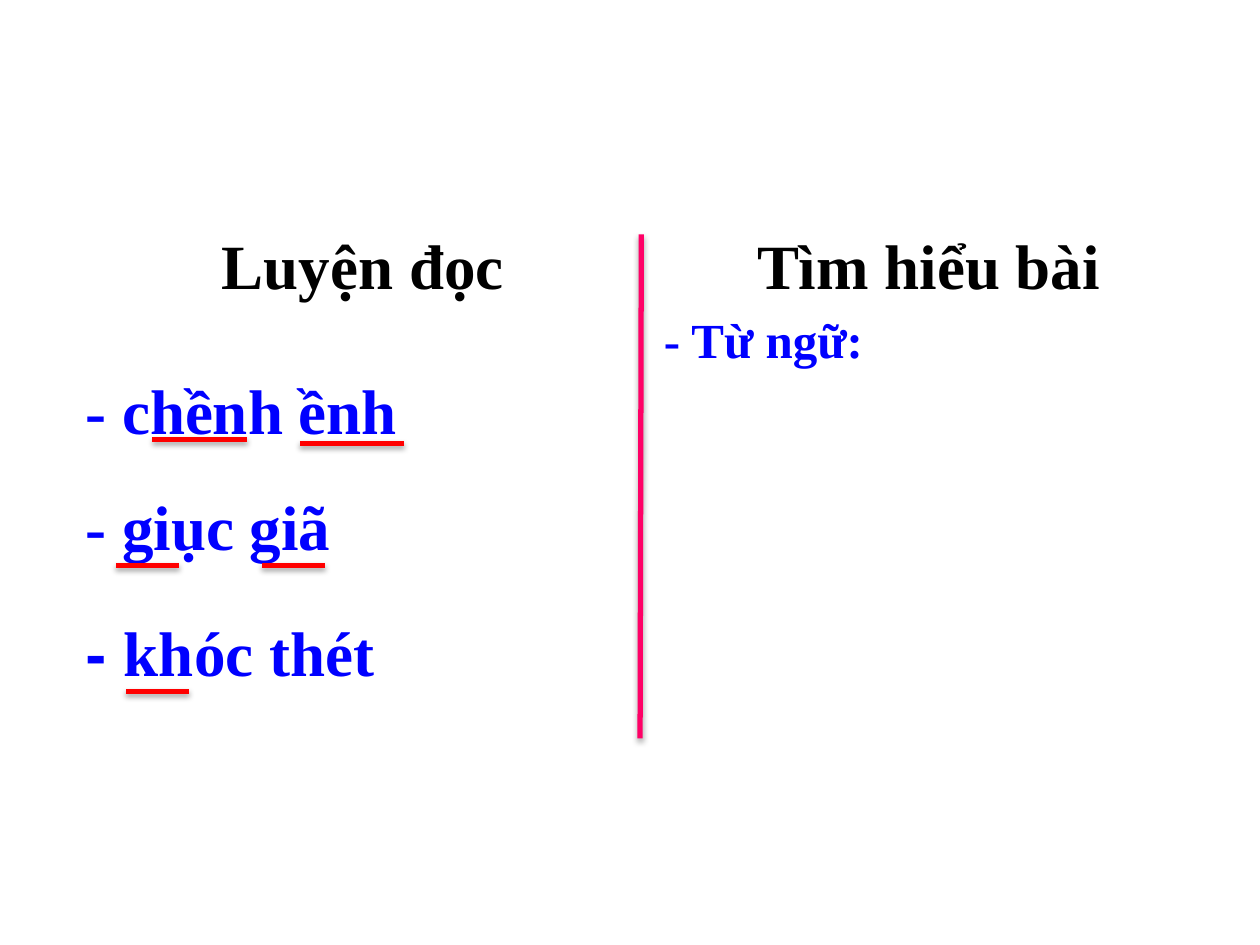
from lxml import etree
from pptx import Presentation
from pptx.dml.color import RGBColor
from pptx.enum.shapes import MSO_CONNECTOR as Link
from pptx.enum.text import MSO_ANCHOR as Anchor, MSO_AUTO_SIZE as Fit, PP_ALIGN as Align
from pptx.oxml import parse_xml
from pptx.util import Inches, Pt

SERIF = "Times New Roman"
WIDE, HIGH = 4.42, 0.7
SHADE = (
    '<a:effectLst xmlns:a="http://schemas.openxmlformats.org/drawingml/2006/main">'
    '<a:outerShdw blurRad="40000" dist="23000" dir="5400000" rotWithShape="0">'
    '<a:srgbClr val="000000"><a:alpha val="35000"/></a:srgbClr>'
    '</a:outerShdw></a:effectLst>'
)


def paint(color):
    return RGBColor.from_string(color)


def write(shape, text, size, color, align=Align.LEFT, dash=SERIF):
    frame = shape.text_frame
    frame.word_wrap = True
    frame.auto_size = Fit.NONE
    frame.vertical_anchor = Anchor.BOTTOM
    para = frame.paragraphs[0]
    para.alignment = align
    parts = [(text, SERIF)] if dash == SERIF else [(text[:2], dash), (text[2:], SERIF)]
    for part, face in parts:
        run = para.add_run()
        run.text = part
        run.font.name = face
        run.font.size = Pt(size)
        run.font.bold = True
        run.font.color.rgb = paint(color)


def add_head(holder, left, top, text):
    holder.left, holder.top = Inches(left), Inches(top)
    holder.width, holder.height = Inches(WIDE), Inches(HIGH)
    write(holder, text, 36, "000000", Align.CENTER)


def add_item(slide, left, top, text, size=36, dash=SERIF):
    box = slide.shapes.add_textbox(Inches(left), Inches(top), Inches(WIDE), Inches(HIGH))
    write(box, text, size, "0000FF", dash=dash)


def add_rule(slide, x1, y1, x2, y2, color):
    ends = [Inches(n) for n in (x1, y1, x2, y2)]
    rule = slide.shapes.add_connector(Link.STRAIGHT, *ends)
    rule.line.color.rgb = paint(color)
    rule.line.width = Pt(3)
    rule._element.spPr.append(parse_xml(SHADE))


def add_words(slide, holder, left, top):
    add_head(holder, left + 0.09, top, "Luyện đọc")
    words = [
        (1.15, "- chềnh ềnh", SERIF, [(0.63, 0.59, 0.75), (1.8, 0.62, 0.83)]),
        (2.07, "- giục giã", SERIF, [(0.34, 0.67, 0.5), (1.5, 0.67, 0.5)]),
        (3.07, "- khóc thét", "Arial", [(0.42, 0.67, 0.5)]),
    ]
    for down, text, dash, marks in words:
        add_item(slide, left, top + down, text, dash=dash)
        for x, y, width in marks:
            start, level = left + x, top + down + y
            add_rule(slide, start, level, start + width, level, "FF0000")


def add_study(slide, holder, left, top):
    add_head(holder, left, top, "Tìm hiểu bài")
    add_item(slide, left + 0.01, top + 0.52, "- Từ ngữ:", 28)


def main():
    deck = Presentation()
    deck.slide_width, deck.slide_height = Inches(10), Inches(7.5)
    slide = deck.slides.add_slide(deck.slide_layouts.get_by_name("Comparison"))
    spots = {spot.placeholder_format.idx: spot for spot in slide.placeholders}
    add_words(slide, spots.pop(1), 0.58, 1.75)
    add_study(slide, spots.pop(3), 5.16, 1.75)
    add_rule(slide, 5.09, 1.86, 5.08, 5.86, "FF0066")
    for spot in spots.values():
        spot.element.getparent().remove(spot.element)
    deck.save("out.pptx")


if __name__ == "__main__":
    main()
